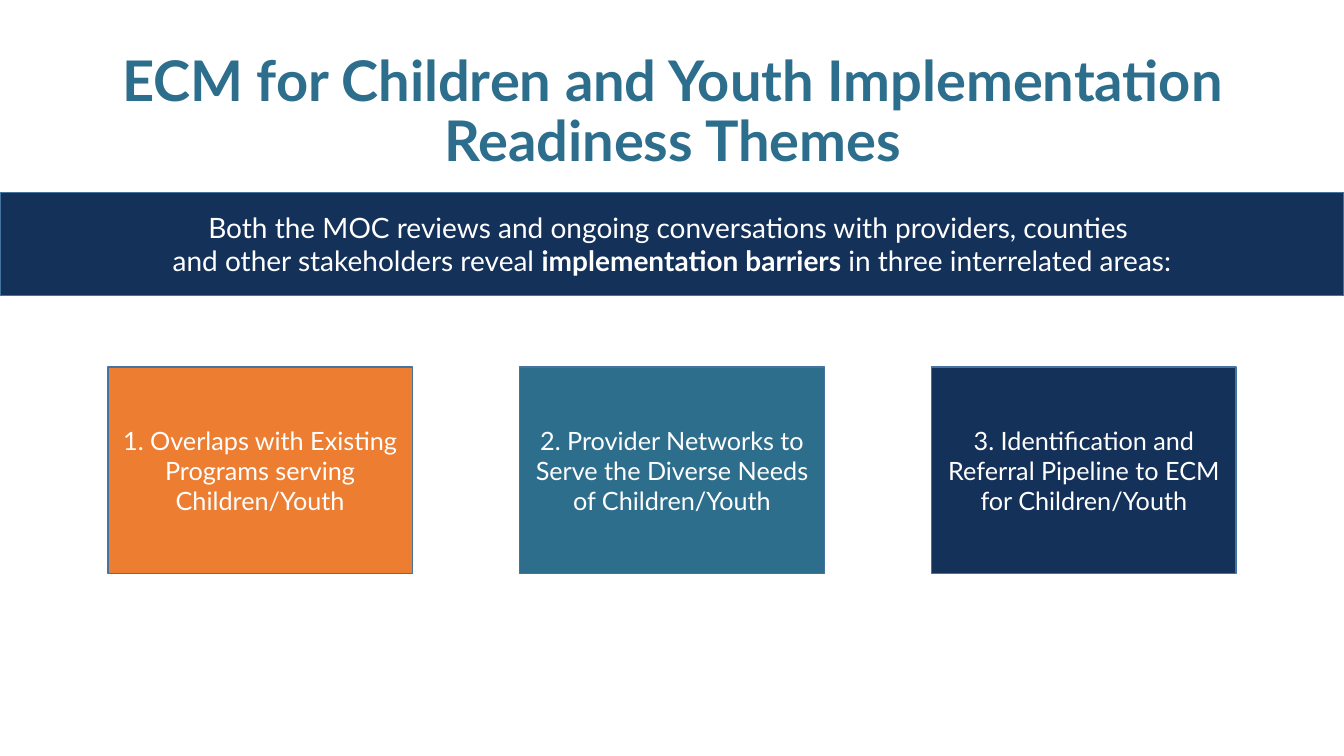
from pptx import Presentation
from pptx.dml.color import RGBColor
from pptx.enum.shapes import MSO_SHAPE as Shape
from pptx.enum.text import MSO_ANCHOR as Anchor, PP_ALIGN as Align
from pptx.util import Inches, Pt

WIDE, HIGH = 13.33, 7.5
NAVY, TEAL, ORANGE = "14315A", "2D6E8D", "ED7D31"
EDGE, WHITE = "43739E", "FFFFFF"
LEFT, STEP = 1.07, 4.085
TITLE = "ECM for Children and Youth Implementation Readiness Themes"
INTRO = [
    [("Both the MOC reviews and ongoing conversations with providers, counties ", False)],
    [("and other stakeholders reveal ", False),
     ("implementation barriers ", True),
     ("in three interrelated areas:", False)],
]
AREAS = [
    ("1. Overlaps with Existing Programs serving Children/Youth", ORANGE),
    ("2. Provider Networks to Serve the Diverse Needs of Children/Youth", TEAL),
    ("3. Identification and Referral Pipeline to ECM for Children/Youth", NAVY),
]


def color(code):
    return RGBColor.from_string(code)


def place(item, left, top, width, height):
    item.left, item.top = Inches(left), Inches(top)
    item.width, item.height = Inches(width), Inches(height)


def write(frame, lines, size=18, ink=WHITE, space=None):
    """Fill a text frame with lines, each a list of (text, bold) runs."""
    frame.word_wrap = True
    frame.vertical_anchor = Anchor.MIDDLE
    for row, line in enumerate(lines):
        para = frame.add_paragraph() if row else frame.paragraphs[0]
        para.alignment = Align.CENTER
        if space:
            para.line_spacing = space
        for text, bold in line:
            run = para.add_run()
            run.text = text
            font = run.font
            font.name, font.size, font.bold = "Lato", Pt(size), bold
            font.color.rgb = color(ink)


def add_title(slide):
    title = slide.shapes.title
    place(title, 0.92, 0.4, 11.5, 1.45)
    write(title.text_frame, [[(TITLE, True)]], size=40, ink=TEAL, space=0.9)


def add_box(slide, spot, fill, lines, size=18):
    box = slide.shapes.add_shape(Shape.RECTANGLE, 0, 0, 0, 0)
    place(box, *spot)
    box.shadow.inherit = False
    box.fill.solid()
    box.fill.fore_color.rgb = color(fill)
    box.line.color.rgb = color(EDGE)
    box.line.width = Pt(1)
    write(box.text_frame, lines, size=size)


def main():
    deck = Presentation()
    deck.slide_width, deck.slide_height = Inches(WIDE), Inches(HIGH)
    slide = deck.slides.add_slide(deck.slide_layouts[5])
    add_title(slide)
    add_box(slide, (0, 1.91, WIDE, 1.02), NAVY, INTRO, size=20)
    for col, (text, fill) in enumerate(AREAS):
        spot = (LEFT + col * STEP, 3.64, 3.02, 2.05)
        add_box(slide, spot, fill, [[(text, False)]])
    deck.save("out.pptx")


if __name__ == "__main__":
    main()
